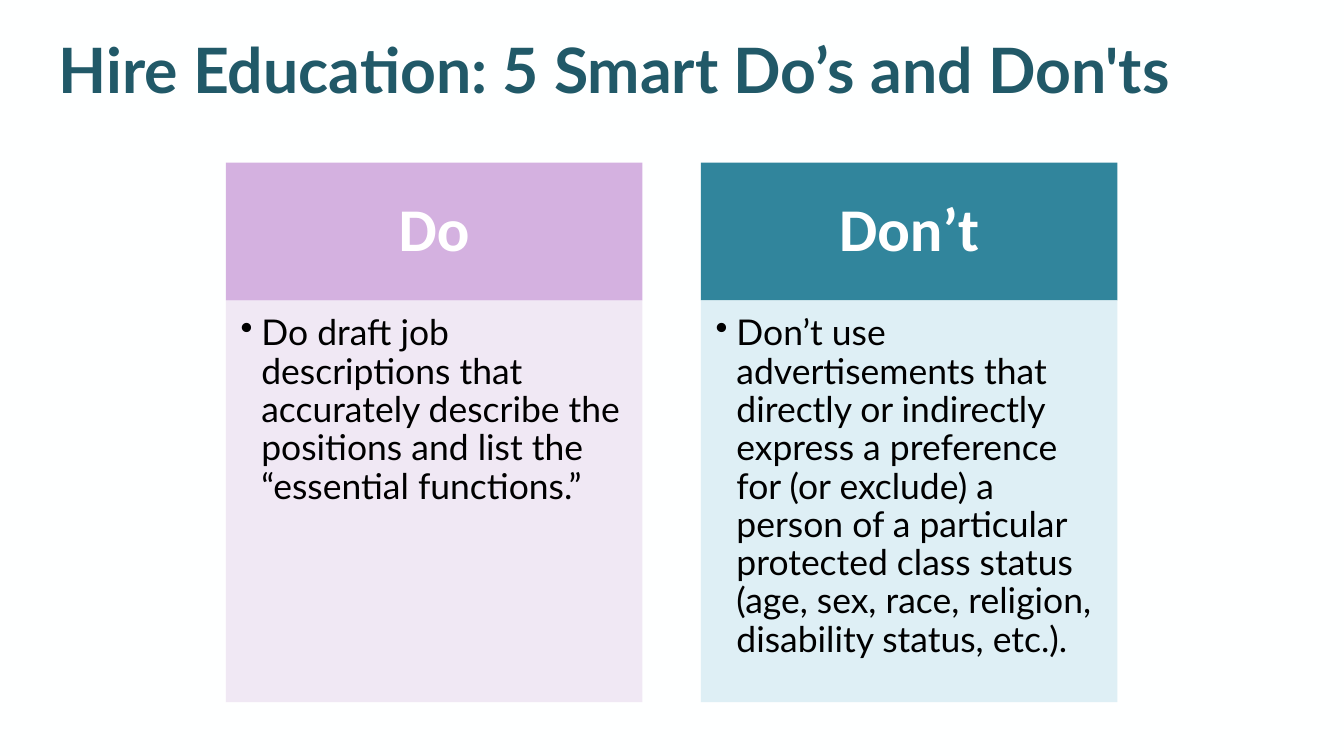
"""Build the slide of hiring do's and don'ts."""
from dataclasses import dataclass

from lxml.etree import SubElement
from pptx import Presentation
from pptx.dml.color import RGBColor
from pptx.enum.shapes import MSO_SHAPE as Shape
from pptx.enum.text import MSO_ANCHOR as Anchor, MSO_AUTO_SIZE as Fit, PP_ALIGN as Align
from pptx.oxml.ns import qn
from pptx.util import Inches, Pt

PAPER = RGBColor(0xFE, 0xFF, 0xFF)
NAVY = RGBColor(0x21, 0x59, 0x68)
WHITE = RGBColor(0xFF, 0xFF, 0xFF)
BLACK = RGBColor(0, 0, 0)
LILAC = RGBColor(0xD4, 0xB1, 0xE0)
MAUVE = RGBColor(0xD7, 0xBF, 0xE0)
TEAL = RGBColor(0x31, 0x85, 0x9C)
SKY = RGBColor(0xDB, 0xEE, 0xF4)

LEFT, STEP, WIDTH = 3.36, 7.07, 6.2
TOP, HEAD, BODY = 2.42, 2.05, 5.98


@dataclass
class Card:
    head: str
    text: str
    dark: RGBColor
    pale: RGBColor
    alpha: int


CARDS = [
    Card("Do", "Do draft job descriptions that accurately describe the positions "
         "and list the “essential functions.”", LILAC, MAUVE, 35),
    Card("Don’t", "Don’t use advertisements that directly or indirectly express a "
         "preference for (or exclude) a person of a particular protected class "
         "status (age, sex, race, religion, disability status, etc.).", TEAL, SKY, 90),
]


def pad(frame, left: float, top: float, right: float, bottom: float) -> None:
    frame.margin_left, frame.margin_top = Inches(left), Inches(top)
    frame.margin_right, frame.margin_bottom = Inches(right), Inches(bottom)
    frame.word_wrap = True


def write(para, text: str, size: int, face: str, color: RGBColor, bold: bool) -> None:
    run = para.add_run()
    run.text = text
    font = run.font
    font.size, font.name, font.bold = Pt(size), face, bold
    font.color.rgb = color


def add_box(slide, left: float, top: float, height: float, color: RGBColor):
    box = slide.shapes.add_shape(
        Shape.RECTANGLE, Inches(left), Inches(top), Inches(WIDTH), Inches(height))
    box.shadow.inherit = False
    box.fill.solid()
    box.fill.fore_color.rgb = color
    box.line.fill.background()
    return box


def add_bullet(para) -> None:
    props = para._p.get_or_add_pPr()
    props.set("marL", str(Inches(0.31)))
    props.set("indent", str(-Inches(0.31)))
    SubElement(props, qn("a:buChar"), char="•")


def add_head(slide, card: Card, left: float) -> None:
    frame = add_box(slide, left, TOP, HEAD, card.dark).text_frame
    pad(frame, 0.51, 0.29, 0.51, 0.29)
    frame.vertical_anchor = Anchor.MIDDLE
    para = frame.paragraphs[0]
    para.alignment, para.line_spacing = Align.CENTER, 0.9
    write(para, card.head, 65, "Calibri", WHITE, True)


def add_body(slide, card: Card, left: float) -> None:
    box = add_box(slide, left, TOP + HEAD, BODY, card.pale)
    tint = box._element.spPr.find(qn("a:solidFill"))[0]
    SubElement(tint, qn("a:alpha"), val=str(card.alpha * 1000))
    frame = box.text_frame
    pad(frame, 0.22, 0.22, 0.3, 0.33)
    frame.vertical_anchor = Anchor.TOP
    para = frame.paragraphs[0]
    add_bullet(para)
    para.level, para.alignment, para.line_spacing = 1, Align.LEFT, 0.9
    write(para, card.text, 38, "Lato", BLACK, False)


def add_title(slide, text: str) -> None:
    title = slide.shapes.title
    title.left, title.top = Inches(0.87), Inches(0.51)
    title.width, title.height = Inches(17.07), Inches(1.07)
    frame = title.text_frame
    pad(frame, 0, 0, 0, 0)
    frame.auto_size = Fit.SHAPE_TO_FIT_TEXT
    frame.vertical_anchor = Anchor.TOP
    para = frame.paragraphs[0]
    para.alignment, para.line_spacing = Align.LEFT, Pt(76.4)
    write(para, text, 67, "Lato", NAVY, True)


def main() -> None:
    deck = Presentation()
    deck.slide_width, deck.slide_height = Inches(20), Inches(11.25)
    slide = deck.slides.add_slide(deck.slide_layouts[5])
    slide.background.fill.solid()
    slide.background.fill.fore_color.rgb = PAPER
    add_title(slide, "Hire Education: 5 Smart Do’s and Don'ts")
    for i, card in enumerate(CARDS):
        left = LEFT + i * STEP
        add_head(slide, card, left)
        add_body(slide, card, left)
    deck.save("out.pptx")


if __name__ == "__main__":
    main()
